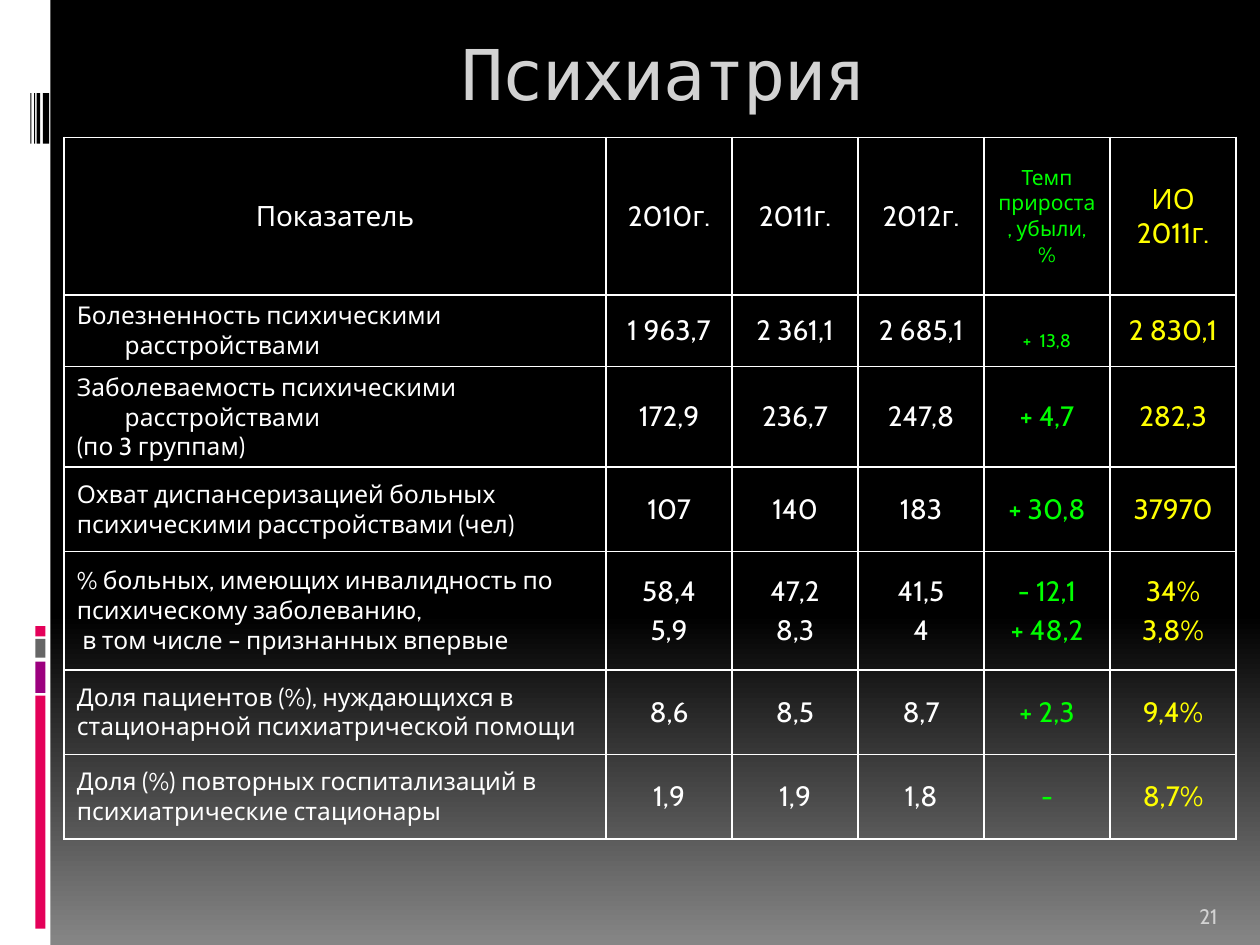
from lxml import etree
from pptx import Presentation, util as u
from pptx.dml.color import RGBColor
from pptx.enum import shapes, text
from pptx.oxml import ns

THEME = {
    "font": "Cabin", "mono": "DejaVu Sans Mono",
    "white": "FFFFFF", "black": "000000", "gray": "868686", "pale": "D2D2D2",
    "green": "00FF00", "gold": "FFFF00",
    "pink": "E40059", "plum": "9C007F", "ash": "666666",
    "title": 40, "body": 16, "label": 14, "small": 12, "sub": 18,
}
TITLE = "Психиатрия"
PAGE = "21"
ROWS = [
    ("Показатель", "2010г.", "2011г.", "2012г.", "Темп прироста, убыли, %", "ИО 2011г."),
    ("Болезненность психическими расстройствами",
     "1 963,7", "2 361,1", "2 685,1", "+  13,8", "2 830,1"),
    ("Заболеваемость психическими расстройствами\n(по 3 группам)",
     "172,9", "236,7", "247,8", "+ 4,7", "282,3"),
    ("Охват диспансеризацией больных\nпсихическими расстройствами (чел)",
     "107", "140", "183", "+ 30,8", "37970"),
    ("% больных, имеющих инвалидность по\nпсихическому заболеванию,\n"
     " в том числе – признанных впервые",
     "58,4\n5,9", "47,2\n8,3", "41,5\n4", "- 12,1\n+ 48,2", "34%\n3,8%"),
    ("Доля пациентов (%), нуждающихся в\nстационарной психиатрической помощи",
     "8,6", "8,5", "8,7", "+ 2,3", "9,4%"),
    ("Доля (%) повторных госпитализаций в\nпсихиатрические стационары",
     "1,9", "1,9", "1,8", "-", "8,7%"),
]
WIDTHS = [4.3] + [1] * 5
HEIGHTS = [1.25, 0.43, 0.67, 0.67, 0.94, 0.67, 0.67]
INKS = ["white"] * 4 + ["green", "gold"]
BLOCKS = [(5.52, 1.85, "pink"), (5.25, 0.25, "plum"), (5.07, 0.15, "ash"), (4.97, 0.08, "pink")]
BARS = [(0.34, 0.05), (0.29, 0.03), (0.27, 0.01), (0.24, 0.01)]
HANG = u.Inches(0.38)


def rgb(ink):
    return RGBColor.from_string(THEME[ink])


def style(run, size, ink, font="font"):
    run.font.size = u.Pt(THEME[size])
    run.font.name = THEME[font]
    run.font.color.rgb = rgb(ink)


def block(slide, x, y, w, h, ink):
    box = slide.shapes.add_shape(shapes.MSO_SHAPE.RECTANGLE, *map(u.Inches, (x, y, w, h)))
    box.shadow.inherit = False
    box.fill.solid()
    box.fill.fore_color.rgb = rgb(ink)
    box.line.fill.background()


def label(slide, place, words, size, font="font"):
    frame = slide.shapes.add_textbox(*map(u.Inches, place)).text_frame
    frame.word_wrap = True
    frame.text = words
    style(frame.paragraphs[0].runs[0], size, "pale", font)
    return frame


def border(cell):
    props = cell._tc.get_or_add_tcPr()
    for spot, side in enumerate(("lnL", "lnR", "lnT", "lnB")):
        line = etree.Element(ns.qn("a:" + side), w=str(u.Pt(1)))
        fill = etree.SubElement(line, ns.qn("a:solidFill"))
        etree.SubElement(fill, ns.qn("a:srgbClr"), val=THEME["white"])
        props.insert(spot, line)


def fill_cell(cell, row, col, words):
    cell.fill.background()
    border(cell)
    cell.vertical_anchor = text.MSO_ANCHOR.MIDDLE
    cell.text_frame.text = words
    sunk = (row, col) == (1, 4)
    size = "body"
    if row and not col:
        size = "label"
    elif (row, col) == (0, 4):
        size = "small"
    elif sunk:
        size = "sub"
    for para in cell.text_frame.paragraphs:
        run = para.runs[0]
        style(run, size, INKS[col])
        if sunk:
            run.font._element.set("baseline", "-25000")
        if row and not col:
            props = para._p.get_or_add_pPr()
            props.set("marL", str(HANG))
            props.set("indent", str(-HANG))
        else:
            para.alignment = text.PP_ALIGN.CENTER
            if row > 2 or (row and col < 4):
                para.space_before = u.Pt(THEME["body"] * 0.2)


def main():
    deck = Presentation()
    deck.slide_width, deck.slide_height = u.Inches(10), u.Inches(7.5)
    slide = deck.slides.add_slide(deck.slide_layouts[6])
    back = slide.background.fill
    back.gradient()
    back.gradient_angle = 270
    for stop, (spot, ink) in zip(back.gradient_stops, [(0.65, "black"), (1, "gray")]):
        stop.position = spot
        stop.color.rgb = rgb(ink)

    block(slide, 0, 0, 0.4, 7.5, "white")
    for y, h, ink in BLOCKS:
        block(slide, 0.28, y, 0.08, h, ink)
    for x, w in BARS:
        block(slide, x, 0.74, w, 0.4, "black")

    head = label(slide, (3.28, 0.16, 3.98, 0.55), TITLE, "title", "mono")
    head.margin_top = u.Inches(0.08)
    head.paragraphs[0].alignment = text.PP_ALIGN.CENTER
    head.paragraphs[0].runs[0].font._element.set("spc", "-100")

    place = (0.51, 1.09, sum(WIDTHS), sum(HEIGHTS))
    table = slide.shapes.add_table(len(ROWS), len(WIDTHS), *map(u.Inches, place)).table
    table.first_row = table.horz_banding = False
    for col, width in zip(table.columns, WIDTHS):
        col.width = u.Inches(width)
    for r, (row, height) in enumerate(zip(ROWS, HEIGHTS)):
        table.rows[r].height = u.Inches(height)
        for c, words in enumerate(row):
            fill_cell(table.cell(r, c), r, c, words)

    foot = label(slide, (9.42, 7.02, 0.5, 0.4), PAGE, "small")
    foot.vertical_anchor = text.MSO_ANCHOR.BOTTOM
    deck.save("out.pptx")


if __name__ == "__main__":
    main()
